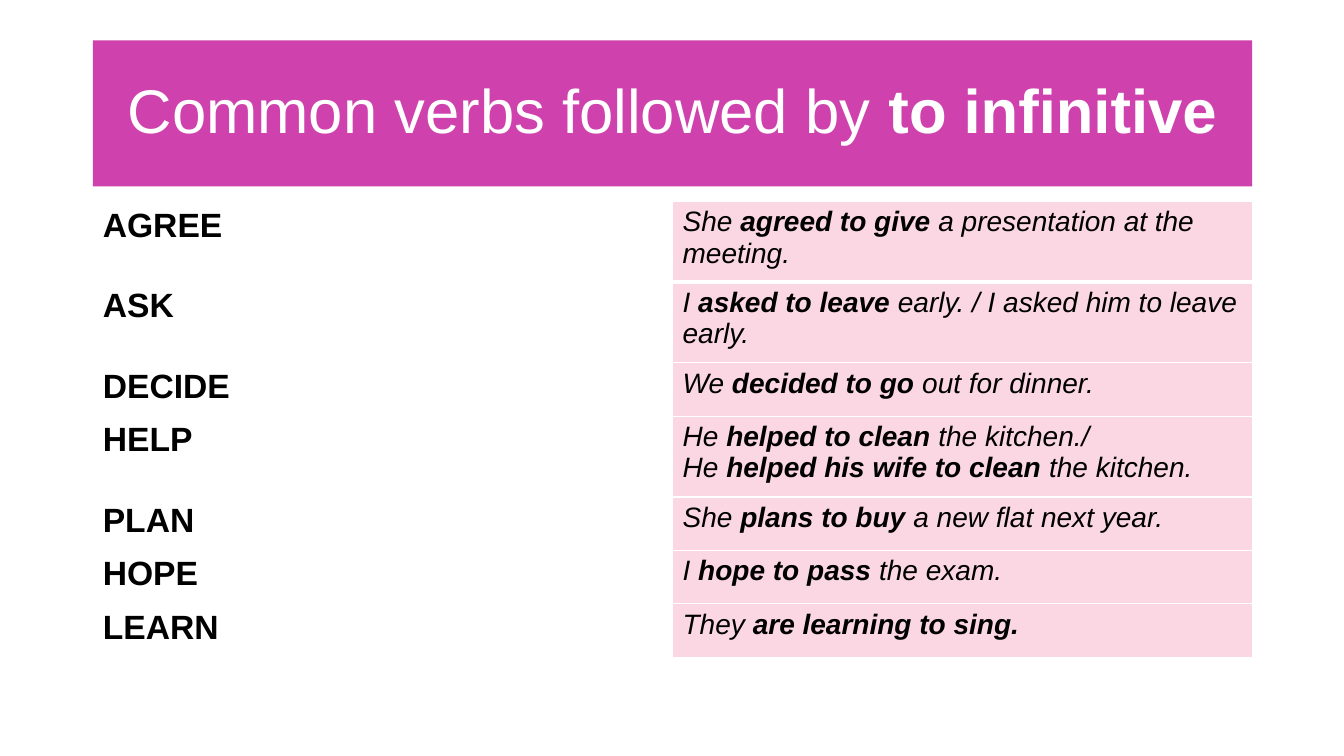
import dataclasses
import pptx
import pptx.util
import pptx.dml.color
import pptx.enum.text
import pptx.oxml
import pptx.oxml.ns


@dataclasses.dataclass(frozen=True)
class Theme:
    font: str = "Arial"
    white: str = "FFFFFF"
    black: str = "000000"
    band: str = "CF41AD"
    pink: str = "FAD7E3"
    head: int = 44
    verb: int = 24
    body: int = 20
    thin: int = 1
    thick: int = 3


THEME = Theme()
WIDE, HIGH = 13.33, 7.5
LEFT, SPAN = 0.92, 11.5
SHORT, TALL = 0.53, 0.8

# Verb, example lines; asterisks enclose bold words
VERBS = [
    ("AGREE", ["She *agreed to give *a presentation at the meeting."], TALL),
    ("ASK", ["I *asked to leave *early. / I asked him to leave early."], TALL),
    ("DECIDE", ["We *decided to go *out for dinner."], SHORT),
    ("HELP", ["He *helped to clean *the kitchen./",
              "He *helped his wife to clean *the kitchen."], TALL),
    ("PLAN", ["She *plans to buy *a new flat next year."], SHORT),
    ("HOPE", ["I *hope to pass *the exam."], SHORT),
    ("LEARN", ["They *are learning to sing.*"], SHORT),
]


def color(code):
    return pptx.dml.color.RGBColor.from_string(code)


def write(frame, lines, size, ink=THEME.black, italic=False, align=None, lead=None):
    """Fill a text frame, one paragraph a line, bold between asterisks."""
    for row, line in enumerate(lines):
        para = frame.paragraphs[0] if row == 0 else frame.add_paragraph()
        para.alignment = align
        para.line_spacing = lead
        for part, words in enumerate(line.split("*")):
            if not words:
                continue
            run = para.add_run()
            run.text = words
            font = run.font
            font.name, font.size = THEME.font, pptx.util.Pt(size)
            font.bold, font.italic = part % 2 == 1, italic
            font.color.rgb = color(ink)


class Page:
    def __init__(self, deck, theme):
        self.theme = theme
        self.slide = deck.slides.add_slide(deck.slide_layouts[5])

    def title(self, text, left, top, width, height):
        box = self.slide.shapes.title
        box.left, box.top, box.width, box.height = map(
            pptx.util.Inches, (left, top, width, height))
        box.fill.solid()
        box.fill.fore_color.rgb = color(self.theme.band)
        frame = box.text_frame
        frame.word_wrap = True
        frame.auto_size = pptx.enum.text.MSO_AUTO_SIZE.NONE
        frame.vertical_anchor = pptx.enum.text.MSO_ANCHOR.MIDDLE
        write(frame, [text], self.theme.head, ink=self.theme.white,
              align=pptx.enum.text.PP_ALIGN.CENTER, lead=0.9)

    def edges(self, cell, row):
        """Draw white rules, thick below the first row."""
        props = cell._tc.get_or_add_tcPr()
        heavy = {(0, "B"), (1, "T")}
        for side in "LRTB":
            width = self.theme.thick if (row, side) in heavy else self.theme.thin
            props.append(pptx.oxml.parse_xml(
                f'<a:ln{side} {pptx.oxml.ns.nsdecls("a")} w="{pptx.util.Pt(width)}">'
                f'<a:solidFill><a:srgbClr val="{self.theme.white}"/></a:solidFill>'
                f'</a:ln{side}>'))

    def cell(self, cell, row, fill, lines, **form):
        self.edges(cell, row)
        cell.fill.solid()
        cell.fill.fore_color.rgb = color(fill)
        write(cell.text_frame, lines, **form)

    def table(self, verbs, left, top, width):
        height = sum(tall for _, _, tall in verbs)
        grid = self.slide.shapes.add_table(
            len(verbs), 2, *map(pptx.util.Inches, (left, top, width, height))).table
        grid.first_row = grid.horz_banding = False
        for row, (verb, lines, tall) in enumerate(verbs):
            grid.rows[row].height = pptx.util.Inches(tall)
            self.cell(grid.cell(row, 0), row, self.theme.white, [f"*{verb}*"],
                      size=self.theme.verb)
            self.cell(grid.cell(row, 1), row, self.theme.pink, lines,
                      size=self.theme.body, italic=True)


def main():
    deck = pptx.Presentation()
    deck.slide_width = pptx.util.Inches(WIDE)
    deck.slide_height = pptx.util.Inches(HIGH)
    page = Page(deck, THEME)

    # Title band
    page.title("Common verbs followed by *to infinitive*", LEFT, 0.4, SPAN, 1.45)

    # Verbs and examples
    page.table(VERBS, LEFT, 2, SPAN)

    deck.save("out.pptx")


if __name__ == "__main__":
    main()
